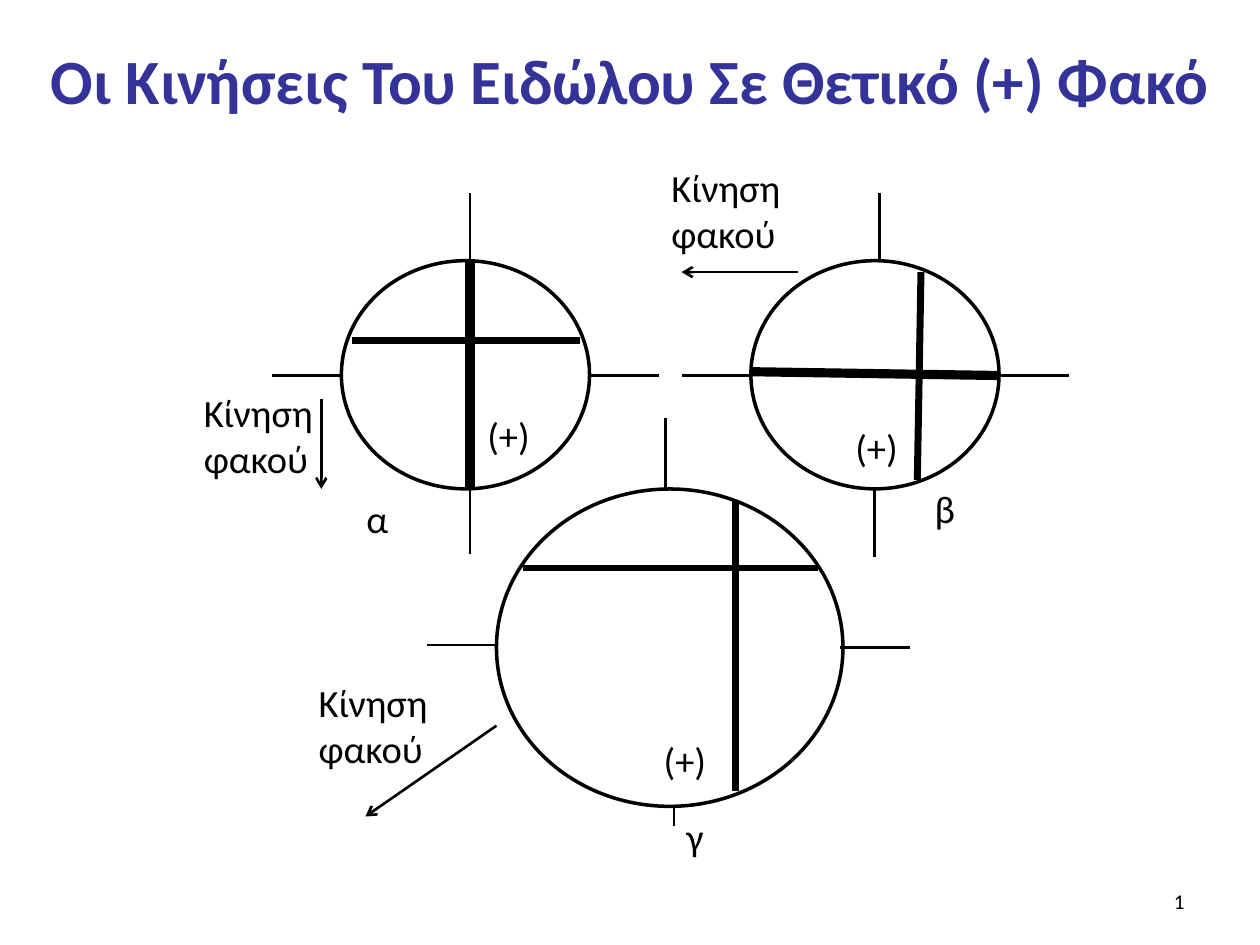
from dataclasses import dataclass

from lxml import etree
from pptx import Presentation
from pptx.dml.color import RGBColor
from pptx.enum.shapes import MSO_CONNECTOR, MSO_SHAPE
from pptx.enum.text import MSO_ANCHOR, PP_ALIGN
from pptx.oxml.ns import qn
from pptx.util import Pt

STRAIGHT = MSO_CONNECTOR.STRAIGHT
OVAL = MSO_SHAPE.OVAL
TOP, MIDDLE = MSO_ANCHOR.TOP, MSO_ANCHOR.MIDDLE
LEFT, CENTER, RIGHT = PP_ALIGN.LEFT, PP_ALIGN.CENTER, PP_ALIGN.RIGHT


@dataclass(frozen=True)
class Theme:
    font: str = "Calibri"
    title_color: RGBColor = RGBColor(0x33, 0x33, 0x99)
    ink: RGBColor = RGBColor(0, 0, 0)
    title_size: float = 36
    label_size: float = 22
    number_size: float = 12
    axis_width: float = 1.5
    outline_width: float = 2


theme = Theme()


def add_text(shapes, text, box, size=theme.label_size, color=theme.ink,
             bold=False, align=LEFT, anchor=TOP):
    shape = shapes.add_textbox(*map(Pt, box))
    frame = shape.text_frame
    frame.word_wrap = True
    frame.vertical_anchor = anchor
    paragraph = frame.paragraphs[0]
    paragraph.alignment = align
    run = paragraph.add_run()
    run.text = text
    run.font.name = theme.font
    run.font.size = Pt(size)
    run.font.bold = bold
    run.font.color.rgb = color


def add_line(shapes, ends, width=theme.axis_width, arrow=False):
    connector = shapes.add_connector(STRAIGHT, *map(Pt, ends))
    connector.line.color.rgb = theme.ink
    connector.line.width = Pt(width)
    if arrow:
        etree.SubElement(connector.line._get_or_add_ln(), qn("a:tailEnd"), type="arrow")
    etree.SubElement(connector._element.spPr, qn("a:effectLst"))


presentation = Presentation()
presentation.slide_width = Pt(720)
presentation.slide_height = Pt(540)
slide = presentation.slides.add_slide(presentation.slide_layouts[6])

add_text(slide.shapes, "Οι Κινήσεις Του Ειδώλου Σε Θετικό (+) Φακό", (0, 9.4, 720, 71.3),
         size=theme.title_size, color=theme.title_color, bold=True,
         align=CENTER, anchor=MIDDLE)

lenses = [
    {
        "name": "α",
        "circle": (195.1, 149, 141.8, 130.4),
        "axes": [(268.6, 149, 268.6, 110.2), (268.6, 316.8, 268.6, 278),
                 (195.1, 214.6, 155.5, 214.6), (376.6, 214.6, 337, 214.6)],
        "cross": [((268.6, 149, 268.6, 279.4), 5.25), ((200.9, 194.4, 331.2, 194.4), 4)],
        "movement": (183.6, 228.2, 183.6, 279.4),
        "movement_label": (109.4, 218.9),
        "name_label": (202.3, 279.4),
        "sign_label": (271.4, 231.8),
    },
    {
        "name": "β",
        "circle": (429.1, 149, 141.8, 130.4),
        "axes": [(502.6, 149, 502.6, 110.2), (499.7, 318.2, 499.7, 279.4),
                 (429.1, 214.6, 389.5, 214.6), (610.6, 214.6, 571, 214.6)],
        "cross": [((429.1, 212.4, 571, 214.6), 5.25), ((526.3, 155.5, 524.2, 274.3), 4)],
        "movement": (455.8, 155.5, 389.5, 155.5),
        "movement_label": (376.6, 90),
        "name_label": (527, 273.6),
        "sign_label": (481.7, 239),
    },
    {
        "name": "γ",
        "circle": (283.7, 279.4, 198, 181.4),
        "axes": [(380.2, 278.6, 380.2, 239), (385.2, 472.3, 385.2, 460.8),
                 (283.7, 368.6, 244.1, 368.6), (519.8, 370.1, 480.2, 370.1)],
        "cross": [((298.8, 324.7, 467.3, 324.7), 3.25), ((420.5, 285.8, 420.5, 452.2), 4)],
        "movement": (283.7, 414.7, 208.8, 466.6),
        "movement_label": (175, 384.5),
        "name_label": (385.2, 460.8),
        "sign_label": (372.2, 417.6),
    },
]

shapes = slide.shapes.add_group_shape().shapes
for lens in lenses:
    circle = shapes.add_shape(OVAL, *map(Pt, lens["circle"]))
    circle.shadow.inherit = False
    circle.fill.background()
    circle.line.color.rgb = theme.ink
    circle.line.width = Pt(theme.outline_width)
    for ends, width in lens["cross"]:
        add_line(shapes, ends, width)
    for ends in lens["axes"]:
        add_line(shapes, ends)
    add_line(shapes, lens["movement"], arrow=True)
    add_text(shapes, "Κίνηση φακού", (*lens["movement_label"], 93.6, 60.5))
    add_text(shapes, lens["name"], (*lens["name_label"], 28.8, 33.8))
    add_text(shapes, "(+)", (*lens["sign_label"], 42.5, 33.8))

add_text(slide.shapes, "1", (516.2, 500.4, 167.8, 28.8),
         size=theme.number_size, align=RIGHT, anchor=MIDDLE)

presentation.save("out.pptx")
